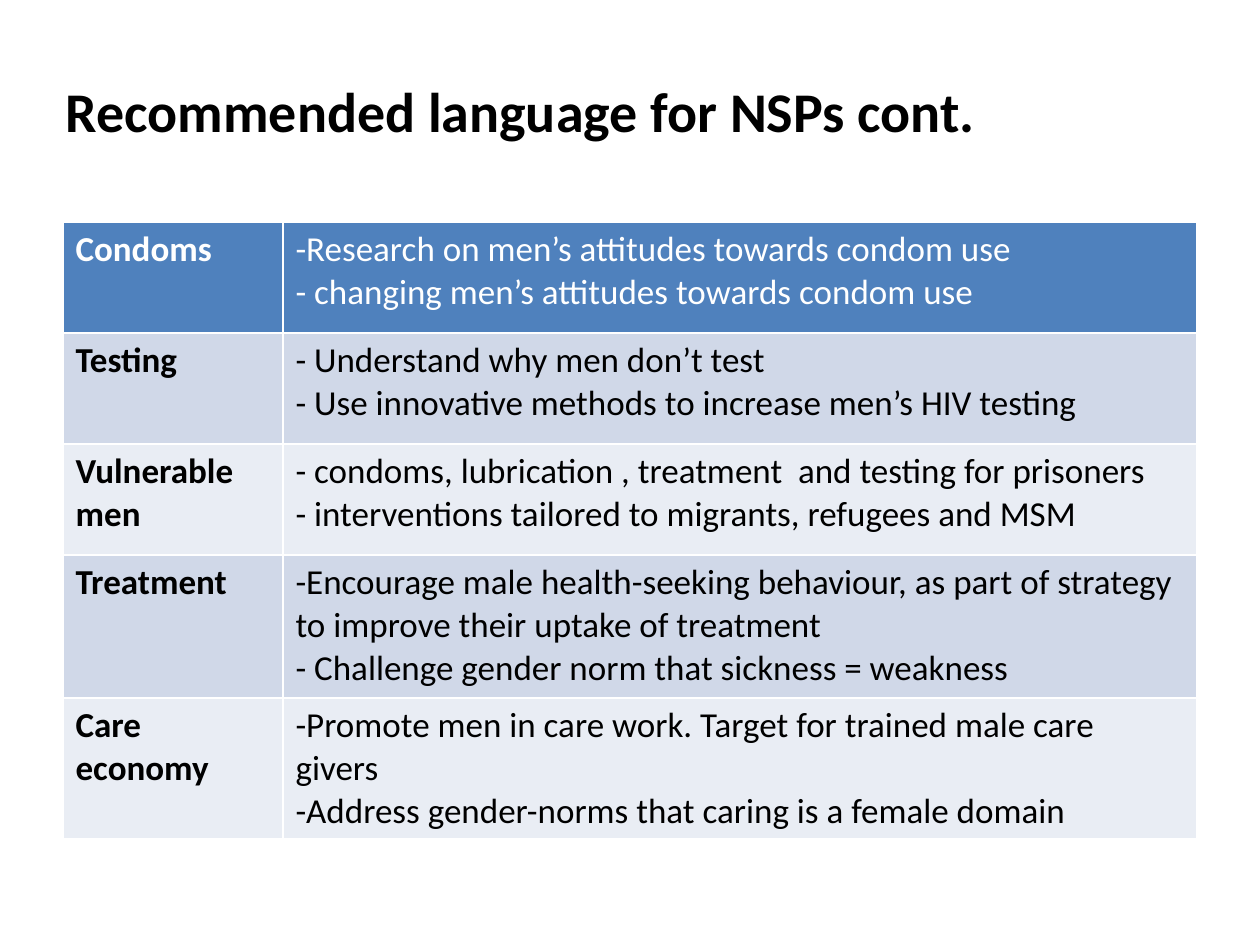
from dataclasses import dataclass

import lxml.etree
import pptx
import pptx.dml.color
import pptx.enum.text
import pptx.oxml.ns
import pptx.util

EMU_PER_PX = 914400 / 126


@dataclass(frozen=True)
class Theme:
    font: str = "Calibri"
    title_size: int = 32
    body_size: int = 20
    border_width: int = 1
    dark: str = "000000"
    light: str = "FFFFFF"
    header_fill: str = "4F81BD"
    band_fills: tuple[str, str] = ("D0D8E8", "E9EDF4")


@dataclass(frozen=True)
class Line:
    text: str
    bullet: bool = True


@dataclass(frozen=True)
class Topic:
    name: str
    height: int
    lines: tuple[Line, ...]


THEME = Theme()
TITLE = "Recommended language for NSPs cont."
COLUMN_WIDTHS = (220, 914)
TOPICS = (
    Topic("Condoms", 111, (
        Line("Research on men’s attitudes towards condom use"),
        Line(" changing men’s attitudes towards condom use"),
    )),
    Topic("Testing", 111, (
        Line(" Understand why men don’t test"),
        Line(" Use innovative methods to increase men’s HIV testing"),
    )),
    Topic("Vulnerable men", 111, (
        Line(" condoms, lubrication , treatment  and testing for prisoners"),
        Line(" interventions tailored to migrants, refugees and MSM"),
    )),
    Topic("Treatment", 143, (
        Line("Encourage male health-seeking behaviour, as part of strategy "
             "to improve their uptake of treatment"),
        Line("- Challenge gender norm that sickness = weakness", bullet=False),
    )),
    Topic("Care economy", 117, (
        Line("Promote men in care work. Target for trained male care givers"),
        Line("Address gender-norms that caring is a female domain"),
    )),
)


def px(length: int) -> pptx.util.Emu:
    return pptx.util.Emu(round(length * EMU_PER_PX))


def rgb(color: str) -> pptx.dml.color.RGBColor:
    return pptx.dml.color.RGBColor.from_string(color)


def add_element(parent, tag: str, **attributes: str):
    element = lxml.etree.SubElement(parent, pptx.oxml.ns.qn(tag))
    for name, value in attributes.items():
        element.set(name, value)
    return element


def write_text(paragraph, text: str, *, size: int, color: str,
               bold: bool = False, bullet: bool = False, hanging: int = 0) -> None:
    paragraph.alignment = pptx.enum.text.PP_ALIGN.LEFT
    properties = paragraph._p.get_or_add_pPr()
    properties.set("marL", str(px(hanging)))
    properties.set("indent", str(-px(hanging)))
    if bullet:
        add_element(properties, "a:buFont", typeface=THEME.font)
        add_element(properties, "a:buChar", char="-")
    run = paragraph.add_run()
    run.text = text
    run.font.name = THEME.font
    run.font.size = pptx.util.Pt(size)
    run.font.bold = bold
    run.font.color.rgb = rgb(color)


def format_cell(cell, fill: str) -> None:
    properties = cell._tc.get_or_add_tcPr()
    width = str(pptx.util.Pt(THEME.border_width))
    for side in ("L", "R", "T", "B"):
        border = add_element(properties, f"a:ln{side}", w=width)
        solid = add_element(border, "a:solidFill")
        add_element(solid, "a:srgbClr", val=THEME.light)
    cell.fill.solid()
    cell.fill.fore_color.rgb = rgb(fill)


def add_title(slide) -> None:
    title = slide.shapes.title
    title.left, title.top, title.width, title.height = map(px, (53, 63, 1183, 95))
    title.text_frame.vertical_anchor = pptx.enum.text.MSO_ANCHOR.MIDDLE
    title.text_frame.auto_size = pptx.enum.text.MSO_AUTO_SIZE.NONE
    write_text(title.text_frame.paragraphs[0], TITLE, size=THEME.title_size,
               color=THEME.dark, bold=True, hanging=48)


def fill_row(table, index: int, topic: Topic) -> None:
    is_header = index == 0
    color = THEME.light if is_header else THEME.dark
    fill = THEME.header_fill if is_header else THEME.band_fills[(index - 1) % 2]
    name_cell, lines_cell = table.cell(index, 0), table.cell(index, 1)
    table.rows[index].height = px(topic.height)
    for cell in (name_cell, lines_cell):
        format_cell(cell, fill)
    write_text(name_cell.text_frame.paragraphs[0], topic.name,
               size=THEME.body_size, color=color, bold=True)
    text_frame = lines_cell.text_frame
    for position, line in enumerate(topic.lines):
        paragraph = text_frame.add_paragraph() if position else text_frame.paragraphs[0]
        write_text(paragraph, line.text, size=THEME.body_size, color=color,
                   bullet=line.bullet)


def add_topic_table(slide) -> None:
    height = sum(topic.height for topic in TOPICS)
    frame = slide.shapes.add_table(len(TOPICS), len(COLUMN_WIDTHS), px(63), px(222),
                                   px(sum(COLUMN_WIDTHS)), px(height))
    table = frame.table
    for column, width in zip(table.columns, COLUMN_WIDTHS):
        column.width = px(width)
    for index, topic in enumerate(TOPICS):
        fill_row(table, index, topic)


def main() -> None:
    presentation = pptx.Presentation()
    presentation.slide_width, presentation.slide_height = px(1260), px(945)
    title_only = presentation.slide_layouts.get_by_name("Title Only")
    slide = presentation.slides.add_slide(title_only)
    add_title(slide)
    add_topic_table(slide)
    presentation.save("out.pptx")


if __name__ == "__main__":
    main()
